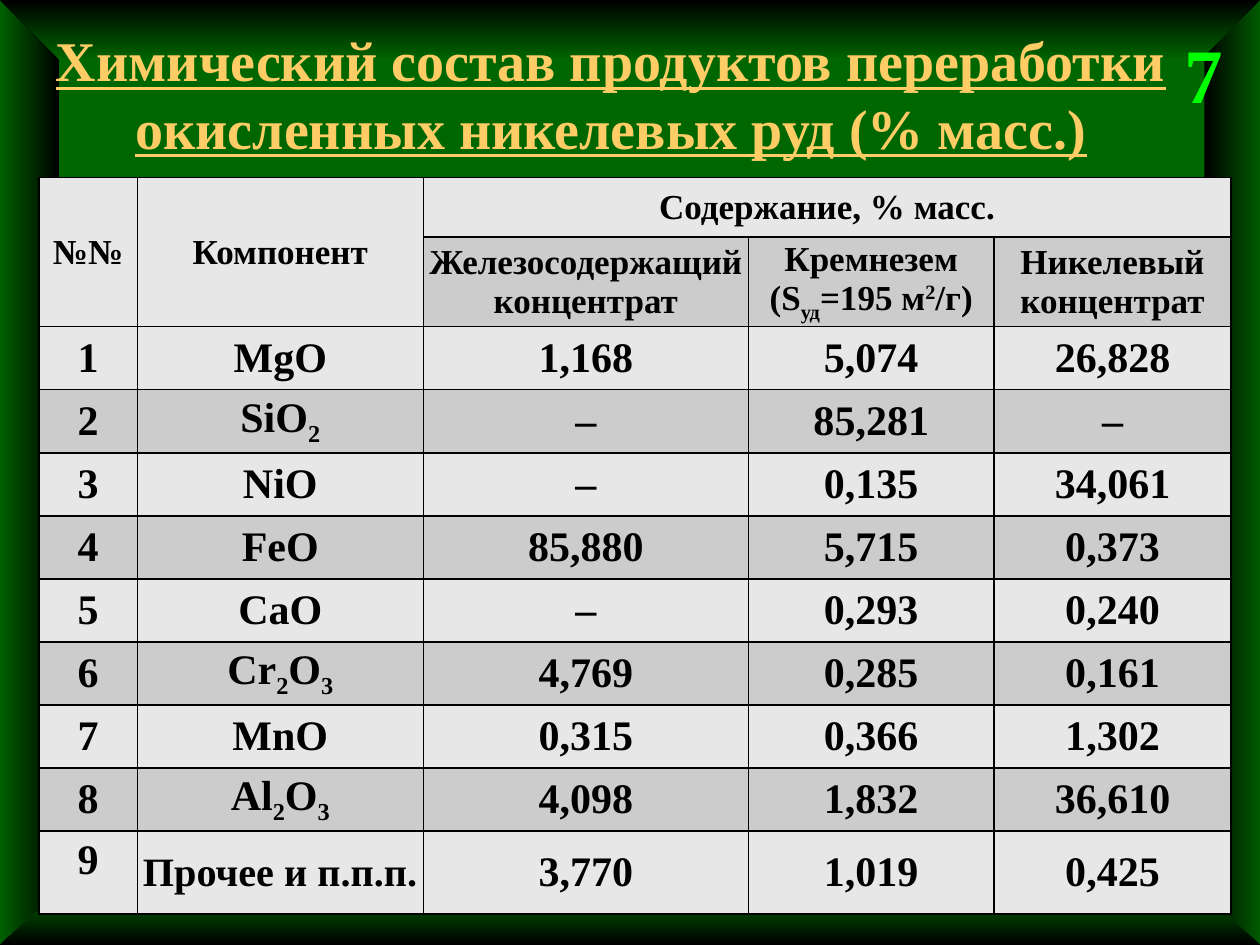
import pptx
import pptx.util
import pptx.dml.color
import pptx.enum.shapes
import pptx.enum.text
import pptx.oxml
import pptx.oxml.ns

Inches, Pt = pptx.util.Inches, pptx.util.Pt
PP_ALIGN = pptx.enum.text.PP_ALIGN
ANCHOR = pptx.enum.text.MSO_ANCHOR

W, H = 10, 7.5
FRAME = 0.48
FONT = "Times New Roman"
GREEN, BLACK = "006600", "000000"
BANDS = ("E7E7E7", "CCCCCC")
TITLE = "Химический состав продуктов переработки окисленных никелевых руд (% масс.)"
NUMBER = "7"

# "|_" opens a subscript, "|^" a superscript, "|" returns to the baseline
HEADER = [
    ["№№", "Компонент", "Содержание, % масс.", "", ""],
    ["", "", "Железосодержащий концентрат",
     "Кремнезем\n(S|_уд|=195 м|^2|/г)", "Никелевый концентрат"],
]
BODY = [
    ["1", "MgO", "1,168", "5,074", "26,828"],
    ["2", "SiO|_2", "–", "85,281", "–"],
    ["3", "NiO", "–", "0,135", "34,061"],
    ["4", "FeO", "85,880", "5,715", "0,373"],
    ["5", "CaO", "–", "0,293", "0,240"],
    ["6", "Cr|_2|O|_3", "4,769", "0,285", "0,161"],
    ["7", "MnO", "0,315", "0,366", "1,302"],
    ["8", "Al|_2|O|_3", "4,098", "1,832", "36,610"],
    ["9", "Прочее и п.п.п.", "3,770", "1,019", "0,425"],
]
MERGES = [((0, 0), (1, 0)), ((0, 1), (1, 1)), ((0, 2), (0, 4))]
COLS = [0.78, 2.27, 2.58, 1.95, 1.88]
ROWS = [0.47, 0.66] + [0.5] * 8 + [0.66]
BASELINES = {"_": "-25000", "^": "30000"}


def rgb(value):
    return pptx.dml.color.RGBColor.from_string(value)


def style(r, size, color, underline=None):
    r.font.name, r.font.size, r.font.bold = FONT, Pt(size), True
    r.font.color.rgb = rgb(color)
    r.font.underline = underline


def write(p, text, size, color, underline=None):
    for part in text.split("|"):
        baseline = BASELINES.get(part[:1])
        r = p.add_run()
        r.text = part[1:] if baseline else part
        style(r, size, color, underline)
        if baseline:
            r.font._element.set("baseline", baseline)


def shade(sp, start, end, angle):
    sp.shadow.inherit = False
    sp.line.fill.background()
    sp.fill.gradient()
    sp.fill.gradient_angle = angle
    for stop, color, position in zip(sp.fill.gradient_stops, (start, end), (0, 1)):
        stop.color.rgb = rgb(color)
        stop.position = position


def add_frame(slide):
    for x, start, end in ((W - FRAME + 0.04, BLACK, GREEN), (-0.03, GREEN, BLACK)):
        sp = slide.shapes.add_shape(pptx.enum.shapes.MSO_SHAPE.RECTANGLE,
                                    Inches(x), 0, Inches(0.5), Inches(H))
        shade(sp, start, end, 0)
    for outer, inner, start, end in ((0, FRAME, BLACK, GREEN),
                                     (H, H - FRAME + 0.05, GREEN, BLACK)):
        fb = slide.shapes.build_freeform(0, Inches(outer))
        corners = [(FRAME, inner), (W - FRAME, inner), (W, outer)]
        fb.add_line_segments([(Inches(x), Inches(y)) for x, y in corners])
        shade(fb.convert_to_shape(), start, end, 270)


def add_text(slide, box, text, size, color, underline=None, wrap=True):
    tb = slide.shapes.add_textbox(*map(Inches, box))
    tf = tb.text_frame
    tf.word_wrap = wrap
    p = tf.paragraphs[0]
    if wrap:
        tf.vertical_anchor = ANCHOR.MIDDLE
        p.alignment = PP_ALIGN.CENTER
    write(p, text, size, color, underline)


def add_borders(cell):
    tcPr = cell._tc.get_or_add_tcPr()
    for i, side in enumerate(("lnL", "lnR", "lnT", "lnB")):
        tcPr.insert(i, pptx.oxml.parse_xml(
            f'<a:{side} {pptx.oxml.ns.nsdecls("a")} w="12700"><a:solidFill>'
            f'<a:srgbClr val="{BLACK}"/></a:solidFill></a:{side}>'))


def text_size(row, col):
    if row < len(HEADER):
        return 20
    return 23 if (row, col) == (len(ROWS) - 1, 1) else 24


def add_table(slide):
    table = slide.shapes.add_table(len(ROWS), len(COLS), Inches(0.31), Inches(1.41),
                                   Inches(sum(COLS)), Inches(sum(ROWS))).table
    for column, width in zip(table.columns, COLS):
        column.width = Inches(width)
    for row, height in zip(table.rows, ROWS):
        row.height = Inches(height)
    for first, last in MERGES:
        table.cell(*first).merge(table.cell(*last))
    for i, values in enumerate(HEADER + BODY):
        for j, value in enumerate(values):
            cell = table.cell(i, j)
            cell.fill.solid()
            cell.fill.fore_color.rgb = rgb(BANDS[i % 2])
            add_borders(cell)
            if cell.is_spanned:
                continue
            last_number = i == len(ROWS) - 1 and j == 0
            cell.vertical_anchor = ANCHOR.TOP if last_number else ANCHOR.MIDDLE
            if i and j:
                cell.margin_left = cell.margin_right = 0
                cell.margin_top = cell.margin_bottom = 0
            tf = cell.text_frame
            for k, line in enumerate(value.split("\n")):
                p = tf.add_paragraph() if k else tf.paragraphs[0]
                p.alignment = PP_ALIGN.CENTER
                write(p, line, text_size(i, j), BLACK)


def main():
    prs = pptx.Presentation()
    prs.slide_width, prs.slide_height = Inches(W), Inches(H)
    slide = prs.slides.add_slide(prs.slide_layouts[6])
    slide.background.fill.solid()
    slide.background.fill.fore_color.rgb = rgb(GREEN)
    add_frame(slide)
    add_text(slide, (0.16, 0.31, 9.38, 0.86), TITLE, 32, "FFCC66", underline=True)
    add_table(slide)
    add_text(slide, (9.3, 0.16, 0.51, 0.84), NUMBER, 44, "00FF00", wrap=False)
    prs.save("out.pptx")


if __name__ == "__main__":
    main()
